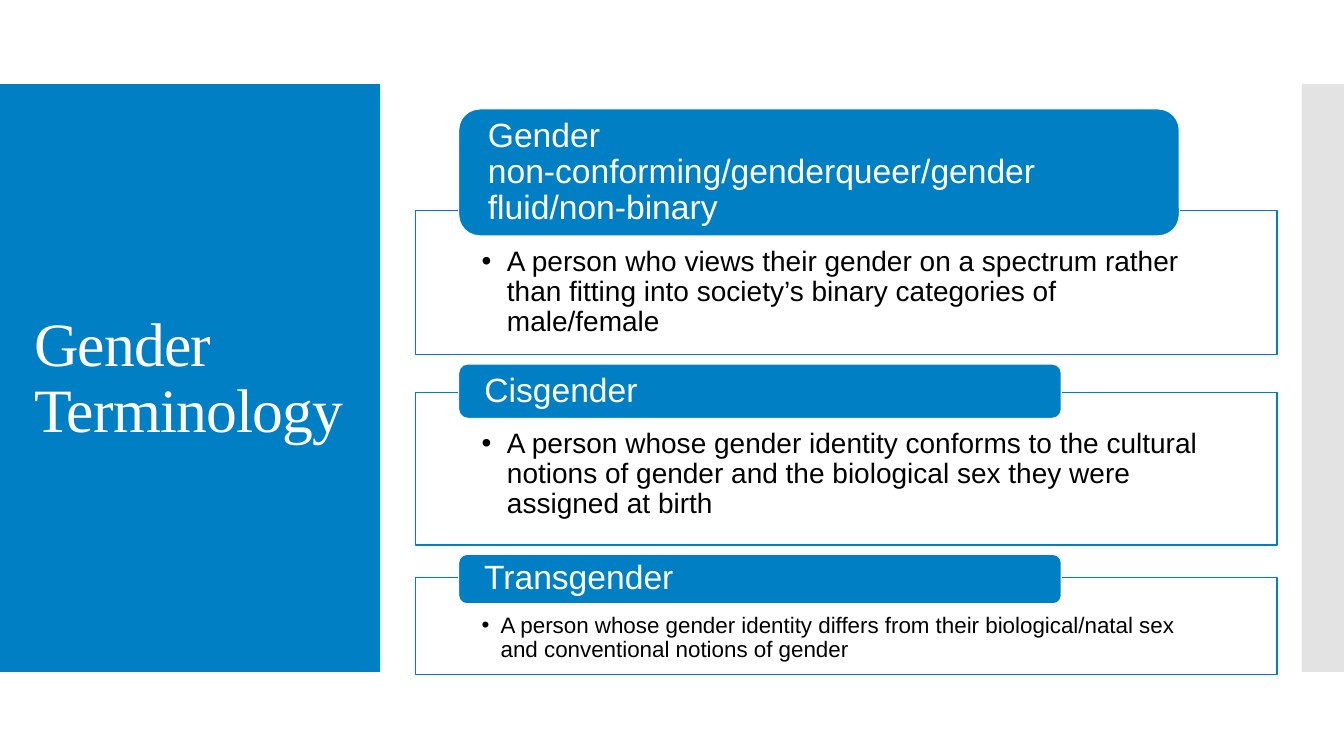
from lxml.etree import SubElement
from pptx import Presentation
from pptx.dml.color import RGBColor
from pptx.enum.shapes import MSO_SHAPE
from pptx.enum.text import MSO_ANCHOR, MSO_AUTO_SIZE, PP_ALIGN
from pptx.oxml.ns import qn
from pptx.util import Pt

BLUE = RGBColor(0x00, 0x7F, 0xC4)
GREY = RGBColor(0xC8, 0xC8, 0xC8)
WHITE = RGBColor(0xFF, 0xFF, 0xFF)
BLACK = RGBColor(0x00, 0x00, 0x00)

HEADING = "Gender Terminology"
TERMS = [
    {"term": "Gender non-conforming/genderqueer/gender fluid/non-binary",
     "meaning": "A person who views their gender on a spectrum rather than fitting "
                "into society’s binary categories of male/female",
     "term_box": (77.8, 514.8, 90.7), "meaning_box": (150.5, 103), "size": 20, "indent": 18},
    {"term": "Cisgender",
     "meaning": "A person whose gender identity conforms to the cultural notions of "
                "gender and the biological sex they were assigned at birth",
     "term_box": (260, 430.5, 38.9), "meaning_box": (280.6, 108.7), "size": 20, "indent": 18},
    {"term": "Transgender",
     "meaning": "A person whose gender identity differs from their biological/natal "
                "sex and conventional notions of gender",
     "term_box": (396, 430.5, 35.3), "meaning_box": (412.6, 69.1), "size": 16, "indent": 13.5},
]

SLIDE_WIDTH, SLIDE_HEIGHT = 960, 540
BAND_TOP, BAND_HEIGHT = 60, 420
BAND_WIDTH, STRIPE_WIDTH = 271.5, 30
MEANING_LEFT, MEANING_WIDTH = 296.6, 615.6
TERM_LEFT = 327.6


def add_box(slide, preset, left, top, width, height, fill, line=None):
    box = slide.shapes.add_shape(preset, Pt(left), Pt(top), Pt(width), Pt(height))
    box.shadow.inherit = False
    box.fill.solid()
    box.fill.fore_color.rgb = fill
    if line is None:
        box.line.fill.background()
    else:
        box.line.color.rgb = line
        box.line.width = Pt(0.85)
    return box


def write(holder, text, size, color, font="Arial", anchor=MSO_ANCHOR.MIDDLE,
          insets=(7.2, 3.6, 7.2, 3.6), indent=None, spacing=None):
    frame = holder.text_frame
    frame.word_wrap = True
    frame.auto_size = MSO_AUTO_SIZE.NONE
    frame.vertical_anchor = anchor
    (frame.margin_left, frame.margin_top,
     frame.margin_right, frame.margin_bottom) = map(Pt, insets)
    paragraph = frame.paragraphs[0]
    paragraph.alignment = PP_ALIGN.LEFT
    paragraph.line_spacing = 0.9
    if indent:
        properties = paragraph._p.get_or_add_pPr()
        properties.set("marL", str(Pt(indent)))
        properties.set("indent", str(-Pt(indent)))
        SubElement(properties, qn("a:buFont"), typeface="Arial")
        SubElement(properties, qn("a:buChar"), char="•")
    run = paragraph.add_run()
    run.text = text
    run.font.name = font
    run.font.size = Pt(size)
    run.font.color.rgb = color
    if spacing:
        run.font._element.set("spc", str(round(spacing * 100)))


def main():
    deck = Presentation()
    deck.slide_width, deck.slide_height = Pt(SLIDE_WIDTH), Pt(SLIDE_HEIGHT)
    slide = deck.slides.add_slide(deck.slide_layouts[5])

    add_box(slide, MSO_SHAPE.RECTANGLE, 0, BAND_TOP, BAND_WIDTH, BAND_HEIGHT, BLUE)
    stripe = add_box(slide, MSO_SHAPE.RECTANGLE, SLIDE_WIDTH - STRIPE_WIDTH, BAND_TOP,
                     STRIPE_WIDTH, BAND_HEIGHT, GREY)
    stripe_color = stripe.element.spPr.find(qn("a:solidFill")).find(qn("a:srgbClr"))
    SubElement(stripe_color, qn("a:alpha"), val="50000")

    title = slide.shapes.title
    title.left, title.top, title.width, title.height = Pt(17.3), Pt(90), Pt(246), Pt(362)
    write(title, HEADING, 44, WHITE, font="Times New Roman", spacing=-0.6)
    title.element.getparent().append(title.element)

    for entry in TERMS:
        top, height = entry["meaning_box"]
        meaning = add_box(slide, MSO_SHAPE.RECTANGLE, MEANING_LEFT, top,
                          MEANING_WIDTH, height, WHITE, BLUE)
        write(meaning, entry["meaning"], entry["size"], BLACK, anchor=MSO_ANCHOR.TOP,
              insets=(47.5, 26, 47.5, 8), indent=entry["indent"])
        top, width, height = entry["term_box"]
        term = add_box(slide, MSO_SHAPE.ROUNDED_RECTANGLE, TERM_LEFT, top,
                       width, height, BLUE, WHITE)
        write(term, entry["term"], 24, WHITE, insets=(16.5, 0, 16.5, 0))

    deck.save("out.pptx")


if __name__ == "__main__":
    main()
